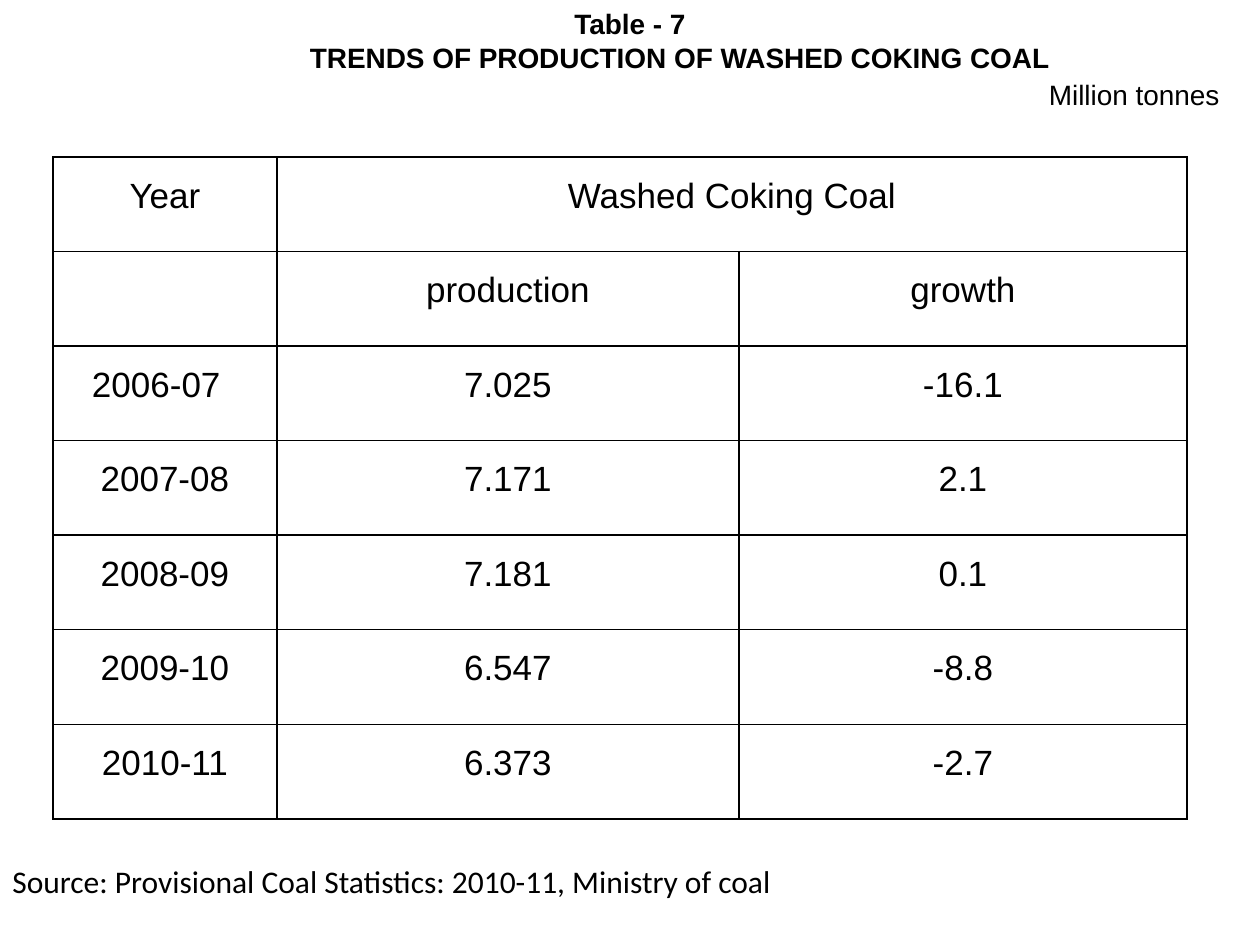
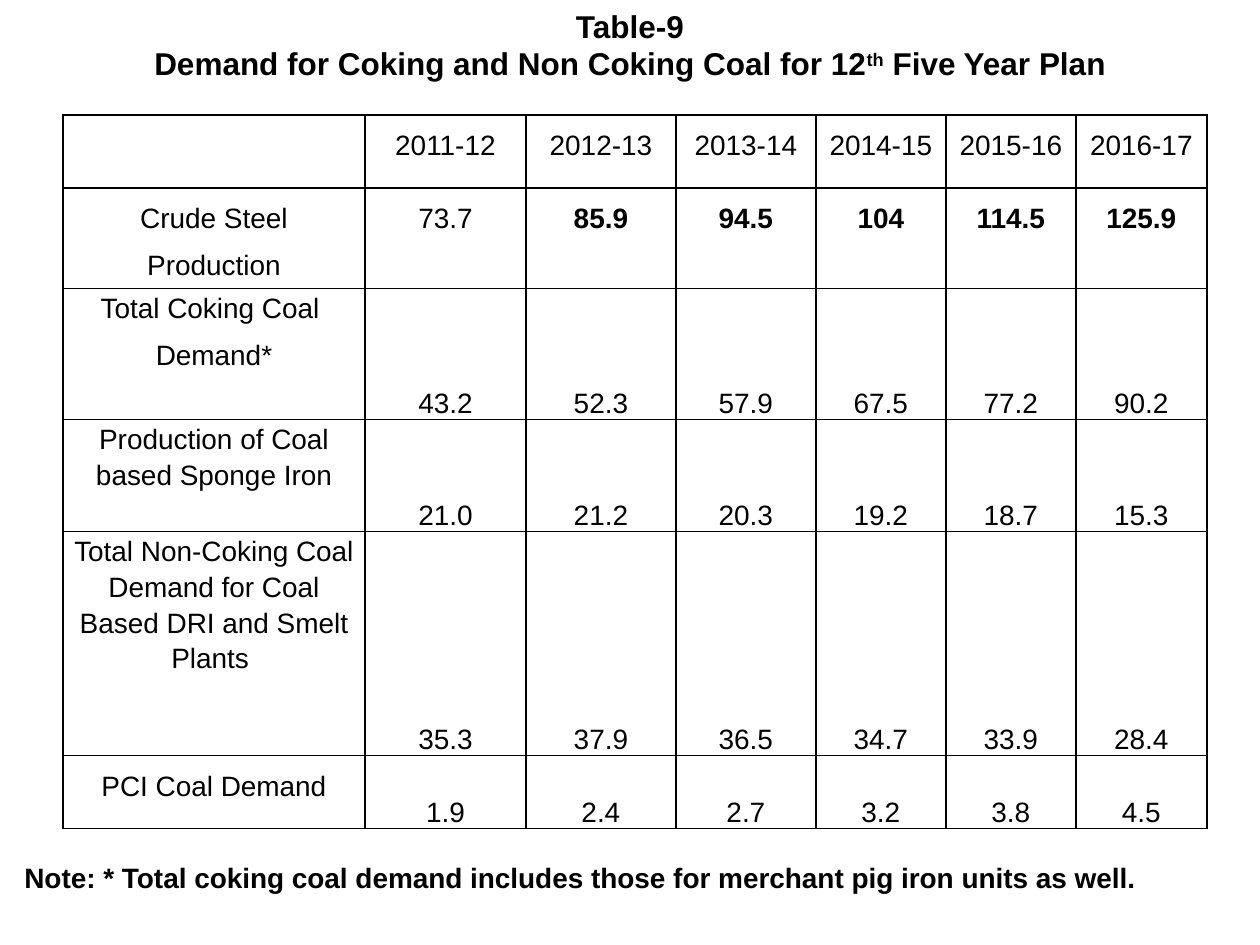
from dataclasses import dataclass

from lxml import etree
from pptx import Presentation
from pptx import util as u
from pptx.dml.color import RGBColor
from pptx.enum import text
from pptx.oxml import ns

SCALE = 914400 / 126  # EMU in one px


@dataclass(frozen=True)
class Theme:
    ink: str = "000000"
    font: str = "Arial"
    source_font: str = "Calibri"
    small: int = 16
    medium: int = 18
    large: int = 20
    line_pt: int = 1
    cell_inset: int = 9
    cell_spacing: float = 1.5
    label_spacing: float = 1.15


THEME = Theme()
ALIGN, ANCHOR = text.PP_ALIGN, text.MSO_ANCHOR


def px(n):
    return u.Emu(round(n * SCALE))


def style_paragraph(p, size, bold=False, align=ALIGN.CENTER, font=THEME.font):
    p.alignment = align
    for r in p.runs:
        r.font.size, r.font.bold, r.font.name = u.Pt(size), bold, font
        r.font.color.rgb = RGBColor.from_string(THEME.ink)


def indent(p, left=0, right=0):
    pPr = p._p.get_or_add_pPr()
    pPr.set("marL", str(px(left)))
    pPr.set("marR", str(px(right)))


def add_text(s, box, content, size, anchor=ANCHOR.TOP, **style):
    tf = s.shapes.add_textbox(*map(px, box)).text_frame
    tf.word_wrap, tf.vertical_anchor = True, anchor
    tf.text = content
    for p in tf.paragraphs:
        style_paragraph(p, size, **style)
    return tf


def add_title(s, height, content, size):
    return add_text(s, (0, 0, 1260, height), content, size, ANCHOR.MIDDLE, bold=True)


def outline_cell(cell):
    tcPr = cell._tc.get_or_add_tcPr()
    for side in ("lnL", "lnR", "lnT", "lnB"):
        ln = etree.SubElement(tcPr, ns.qn(f"a:{side}"), w=str(u.Pt(THEME.line_pt)))
        fill = etree.SubElement(ln, ns.qn("a:solidFill"))
        etree.SubElement(fill, ns.qn("a:srgbClr"), val=THEME.ink)
    cell.fill.background()


def add_grid(s, box, cols, rows, values, size):
    """Fill a ruled table; rows share the height of the box by weight."""
    table = s.shapes.add_table(len(rows), len(cols), *map(px, box)).table
    table.first_row = table.horz_banding = False
    for col, width in zip(table.columns, cols):
        col.width = px(width)
    for row, weight in zip(table.rows, rows):
        row.height = px(box[3] * weight / sum(rows))
    for row, row_values in zip(table.rows, values):
        for cell, value in zip(row.cells, row_values):
            outline_cell(cell)
            cell.margin_left = cell.margin_right = px(THEME.cell_inset)
            cell.margin_top = cell.margin_bottom = 0
            cell.text_frame.text = value
            for p in cell.text_frame.paragraphs:
                style_paragraph(p, size)
                p.line_spacing = THEME.cell_spacing
    return table


WASHED_COAL = [
    ("Year", "Washed Coking Coal", ""),
    ("", "production", "growth"),
    ("2006-07", "7.025", "-16.1"),
    ("2007-08", "7.171", "2.1"),
    ("2008-09", "7.181", "0.1"),
    ("2009-10", "6.547", "-8.8"),
    ("2010-11", "6.373", "-2.7"),
]

COAL_DEMAND = [
    ("", "2011-12", "2012-13", "2013-14", "2014-15", "2015-16", "2016-17"),
    ("Crude Steel Production", "73.7", "85.9", "94.5", "104", "114.5", "125.9"),
    ("Total Coking Coal \nDemand*", "43.2", "52.3", "57.9", "67.5", "77.2", "90.2"),
    ("Production of Coal based Sponge Iron",
     "21.0", "21.2", "20.3", "19.2", "18.7", "15.3"),
    ("Total Non-Coking Coal Demand for Coal Based DRI and Smelt Plants ",
     "35.3", "37.9", "36.5", "34.7", "33.9", "28.4"),
    ("PCI Coal Demand", "1.9", "2.4", "2.7", "3.2", "3.8", "4.5"),
]


def production_slide(s):
    # Title with the unit at the right
    tf = add_title(s, 118, "Table - 7\nTRENDS OF PRODUCTION OF WASHED COKING COAL\n"
                   "Million tonnes", THEME.small)
    _, heading, unit = tf.paragraphs
    indent(heading, left=100)
    style_paragraph(unit, THEME.small, align=ALIGN.RIGHT)
    indent(unit, right=28)
    unit.space_before = u.Pt(2)

    # Production table
    table = add_grid(s, (53, 157, 1134, 662), (224, 462, 448), [1] * 7,
                     WASHED_COAL, THEME.large)
    table.cell(0, 1).merge(table.cell(0, 2))
    first_year = table.cell(2, 0).text_frame.paragraphs[0]
    first_year.alignment = ALIGN.LEFT
    indent(first_year, left=30)

    # Source line
    add_text(s, (0, 856, 1260, 50),
             "Source: Provisional Coal Statistics: 2010-11, Ministry of coal",
             THEME.medium, align=ALIGN.LEFT, font=THEME.source_font)


def demand_slide(s):
    # Title with a raised ordinal
    tf = add_title(s, 89, "Table-9\nDemand for Coking and Non Coking Coal for 12",
                   THEME.medium)
    heading = tf.paragraphs[1]
    for part in ("th", " Five Year Plan"):
        heading.add_run().text = part
    style_paragraph(heading, THEME.medium, bold=True)
    heading.runs[1]._r.get_or_add_rPr().set("baseline", "30000")

    # Demand table
    table = add_grid(s, (63, 115, 1144, 704), (302, 161, 150, 140, 130, 130, 131),
                     (73, 91, 131, 112, 224, 73), COAL_DEMAND, THEME.small)
    for col in range(2, 7):
        table.cell(1, col).text_frame.paragraphs[0].runs[0].font.bold = True
    for row in range(2, 6):
        for col in range(1, 7):
            table.cell(row, col).vertical_anchor = ANCHOR.BOTTOM
    for row in range(2, 5):
        label = table.cell(row, 0).text_frame.paragraphs[0]
        label.line_spacing = THEME.label_spacing

    # Note
    tf = add_text(s, (0, 846, 1260, 63),
                  "Note: * Total coking coal demand includes those for merchant "
                  "pig iron units as well.",
                  THEME.small, ANCHOR.MIDDLE, bold=True, align=ALIGN.JUSTIFY)
    indent(tf.paragraphs[0], left=12)


def main():
    prs = Presentation()
    prs.slide_width, prs.slide_height = px(1260), px(945)
    for build in (production_slide, demand_slide):
        build(prs.slides.add_slide(prs.slide_layouts[6]))
    prs.save("out.pptx")


if __name__ == "__main__":
    main()
